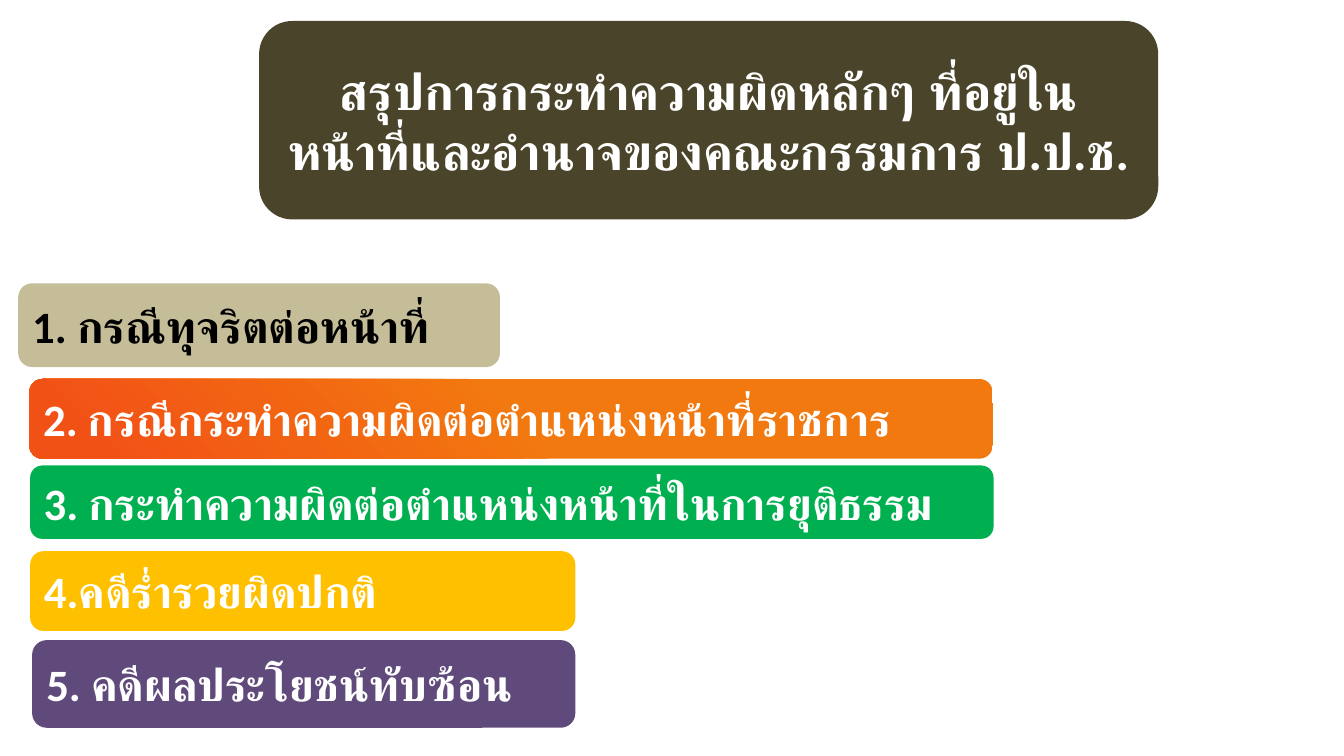
from dataclasses import dataclass

from pptx import Presentation
from pptx.dml.color import RGBColor
from pptx.enum import shapes, text
from pptx.util import Cm, Pt


@dataclass(frozen=True)
class Theme:
    font: str = "Calibri"
    title_size: int = 36
    case_size: int = 32
    light: str = "FFFFFF"
    dark: str = "000000"
    olive: str = "4A452A"
    sand: str = "C4BD97"
    orange: tuple = ((0.48, "F2790F"), (0.93, "F25116"))
    gradient_angle: int = 225
    green: str = "00B050"
    amber: str = "FFC000"
    purple: str = "604A7B"


THEME = Theme()
TITLE = "สรุปการกระทำความผิดหลักๆ ที่อยู่ในหน้าที่และอำนาจของคณะกรรมการ ป.ป.ช."
TITLE_BOX = (6.53, 0.53, 22.66, 5.0)
TITLE_INSET = 0.24
CASES = [
    ("1. กรณีทุจริตต่อหน้าที่", (0.46, 7.14, 12.14, 2.11), THEME.sand, THEME.dark),
    ("2. กรณีกระทำความผิดต่อตำแหน่งหน้าที่ราชการ", (0.74, 9.55, 24.28, 2.01), THEME.orange, THEME.light),
    ("3. กระทำความผิดต่อตำแหน่งหน้าที่ในการยุติธรรม", (0.76, 11.73, 24.28, 1.85), THEME.green, THEME.light),
    ("4.คดีร่ำรวยผิดปกติ", (0.76, 13.89, 13.74, 2.01), THEME.amber, THEME.light),
    ("5. คดีผลประโยชน์ทับซ้อน", (0.81, 16.13, 13.69, 2.21), THEME.purple, THEME.light),
]


def paint(fill, colour):
    if isinstance(colour, str):
        fill.solid()
        fill.fore_color.rgb = RGBColor.from_string(colour)
        return
    fill.gradient()
    fill.gradient_angle = THEME.gradient_angle
    for stop, (position, rgb) in zip(fill.gradient_stops, colour):
        stop.position = position
        stop.color.rgb = RGBColor.from_string(rgb)


def add_panel(s, box, colour):
    sp = s.shapes.add_shape(
        shapes.MSO_SHAPE.ROUNDED_RECTANGLE, *(Cm(v) for v in box))
    sp.shadow.inherit = False
    sp.line.fill.background()
    paint(sp.fill, colour)
    return sp


def write(sp, words, size, colour, align):
    tf = sp.text_frame
    tf.text = words
    tf.word_wrap = True
    tf.auto_size = text.MSO_AUTO_SIZE.NONE
    tf.vertical_anchor = text.MSO_ANCHOR.MIDDLE
    p = tf.paragraphs[0]
    p.alignment = align
    for r in p.runs:
        r.font.name = THEME.font
        r.font.size = Pt(size)
        r.font.bold = True
        r.font.color.rgb = RGBColor.from_string(colour)


def add_title(s):
    add_panel(s, TITLE_BOX, THEME.olive)
    left, top, width, height = TITLE_BOX
    sp = s.shapes.title
    sp.left, sp.top = Cm(left + TITLE_INSET), Cm(top + TITLE_INSET)
    sp.width, sp.height = Cm(width - 2 * TITLE_INSET), Cm(height - 2 * TITLE_INSET)
    write(sp, TITLE, THEME.title_size, THEME.light, text.PP_ALIGN.CENTER)
    s.shapes._spTree.append(sp._element)


def main():
    prs = Presentation()
    prs.slide_width, prs.slide_height = Cm(33.87), Cm(19.05)
    s = prs.slides.add_slide(prs.slide_layouts.get_by_name("Title Only"))
    add_title(s)
    for words, box, colour, ink in CASES:
        sp = add_panel(s, box, colour)
        write(sp, words, THEME.case_size, ink, text.PP_ALIGN.LEFT)
    prs.save("out.pptx")


if __name__ == "__main__":
    main()
